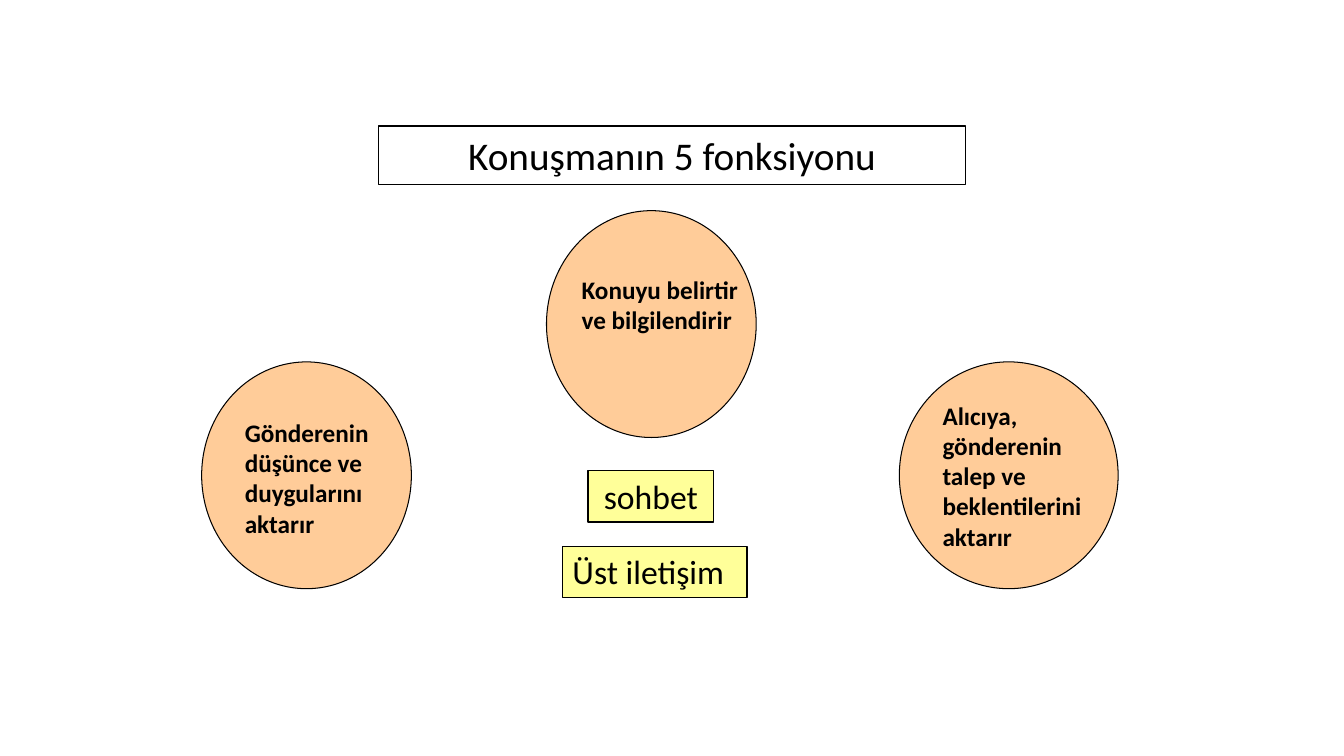
from dataclasses import dataclass

from pptx import Presentation
from pptx.dml.color import RGBColor
from pptx.enum.shapes import MSO_SHAPE as SHAPE
from pptx.enum.text import MSO_ANCHOR as ANCHOR, MSO_AUTO_SIZE as AUTO, PP_ALIGN as ALIGN
from pptx.util import Emu, Pt

EMU_PER_PX = 9144  # 100 px to the inch


@dataclass(frozen=True)
class Theme:
    font: str = "Calibri"
    ink: RGBColor = RGBColor(0x00, 0x00, 0x00)
    circle: RGBColor = RGBColor(0xFF, 0xCC, 0x99)
    label: RGBColor = RGBColor(0xFF, 0xFF, 0x99)
    title_size: int = 28
    label_size: int = 24
    body_size: int = 18
    thin: float = 0.75
    thick: float = 1


THEME = Theme()


def px(*lengths):
    return [Emu(n * EMU_PER_PX) for n in lengths]


def write(sp, text, size, bold=False, align=ALIGN.LEFT):
    tf = sp.text_frame
    tf.word_wrap = True
    tf.auto_size = AUTO.NONE
    tf.vertical_anchor = ANCHOR.TOP
    p = tf.paragraphs[0]
    p.alignment = align
    p.space_before = Pt(0)
    r = p.add_run()
    r.text = text
    r.font.name = THEME.font
    r.font.size = Pt(size)
    r.font.bold = bold
    r.font.color.rgb = THEME.ink


def outline(sp, width):
    sp.line.color.rgb = THEME.ink
    sp.line.width = Pt(width)


def add_title(s, box, text):
    sp = s.shapes.title
    sp.left, sp.top, sp.width, sp.height = px(*box)
    outline(sp, THEME.thin)
    write(sp, text, THEME.title_size, align=ALIGN.CENTER)


def add_filled(s, kind, box, fill, line_width):
    sp = s.shapes.add_shape(kind, *px(*box))
    sp.shadow.inherit = False
    sp.fill.solid()
    sp.fill.fore_color.rgb = fill
    outline(sp, line_width)
    return sp


def add_function(s, circle_box, text_box, text):
    """Draw a circle with its own text box on top."""
    add_filled(s, SHAPE.OVAL, circle_box, THEME.circle, THEME.thin)
    write(s.shapes.add_textbox(*px(*text_box)), text, THEME.body_size, bold=True)


def add_label(s, box, text, align):
    sp = add_filled(s, SHAPE.RECTANGLE, box, THEME.label, THEME.thick)
    write(sp, text, THEME.label_size, align=align)


def main():
    prs = Presentation()
    prs.slide_width, prs.slide_height = px(1333, 750)
    s = prs.slides.add_slide(prs.slide_layouts[5])

    add_title(s, (375, 125, 583, 58), "Konuşmanın 5 fonksiyonu")
    add_function(s, (200, 359, 208, 225), (233, 409, 150, 130),
                 "Gönderenin düşünce ve duygularını aktarır")
    add_function(s, (542, 209, 208, 225), (567, 267, 175, 71),
                 "Konuyu belirtir ve bilgilendirir")
    add_label(s, (583, 467, 125, 51), "sohbet", ALIGN.CENTER)
    add_label(s, (558, 542, 183, 51), "Üst iletişim", ALIGN.LEFT)
    add_function(s, (892, 359, 217, 225), (925, 392, 167, 160),
                 "Alıcıya, gönderenin talep ve beklentilerini aktarır")

    prs.save("out.pptx")


if __name__ == "__main__":
    main()
